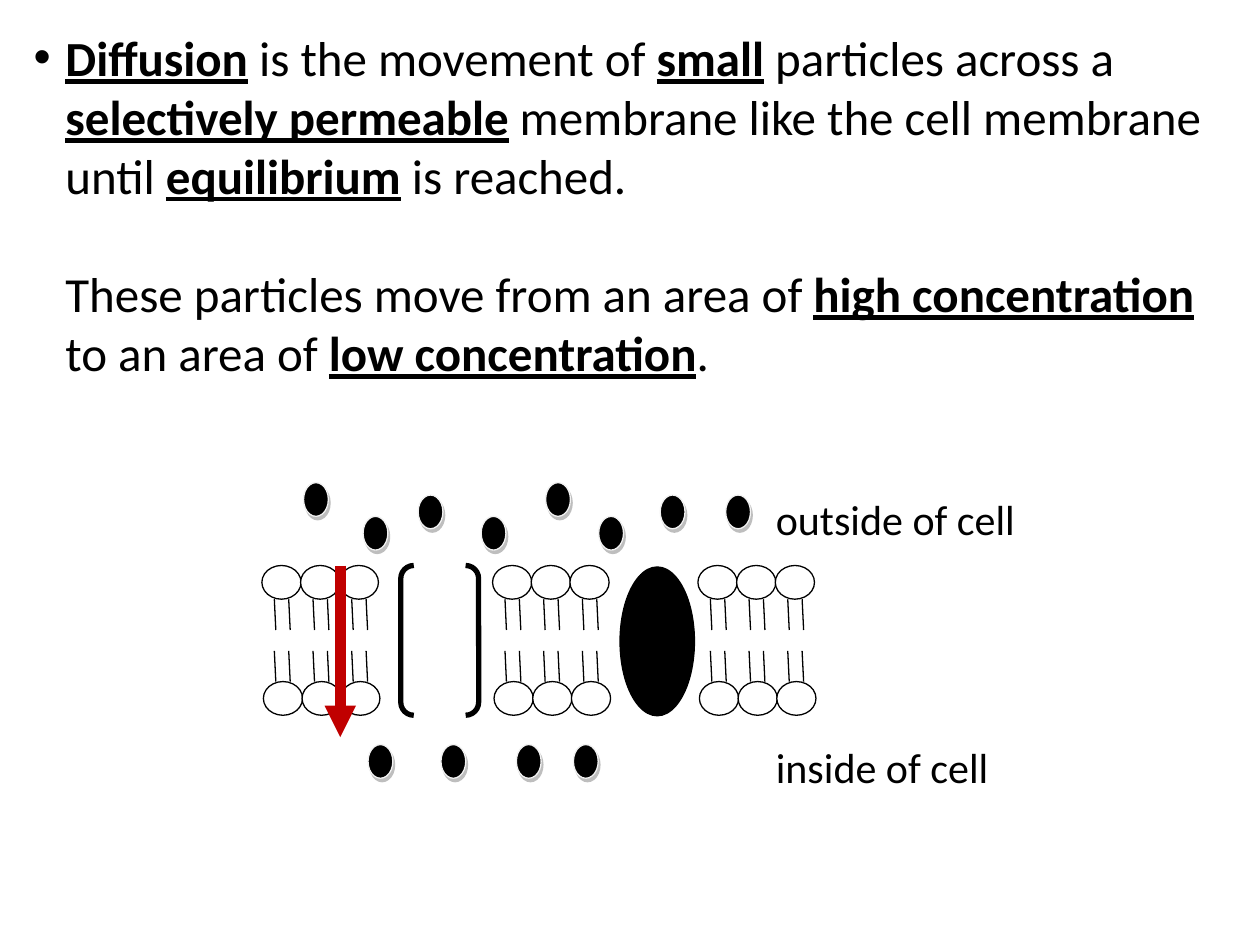
from lxml import etree
from pptx import Presentation
from pptx.dml.color import RGBColor
from pptx.enum.shapes import MSO_CONNECTOR, MSO_SHAPE
from pptx.enum.text import MSO_ANCHOR, PP_ALIGN
from pptx.oxml import parse_xml
from pptx.oxml.ns import nsdecls, qn
from pptx.util import Cm, Pt

COLORS = {"black": "000000", "white": "FFFFFF", "arrow": "C00000",
          "edge": "F2F2F2", "shadow": "7F7F7F"}


def add_run(p, text, size=28, bold=False, underline=False, color="black"):
    r = p.add_run()
    r.text = text
    r.font.name = "Calibri"
    r.font.size = Pt(size)
    r.font.bold = bold
    r.font.underline = underline
    r.font.color.rgb = RGBColor.from_string(COLORS[color])


def add_shape(kind, x, y, w, h, fill="white", line="black", width=0.75):
    sp = s.shapes.add_shape(kind, Cm(x), Cm(y), Cm(w), Cm(h))
    sp.shadow.inherit = False
    if fill:
        sp.fill.solid()
        sp.fill.fore_color.rgb = RGBColor.from_string(COLORS[fill])
    else:
        sp.fill.background()
    sp.line.color.rgb = RGBColor.from_string(COLORS[line])
    sp.line.width = Pt(width)
    return sp


prs = Presentation()
prs.slide_width, prs.slide_height = Cm(25.4), Cm(19.05)
s = prs.slides.add_slide(prs.slide_layouts[6])

# Definition text: key terms are bold and underlined
paragraphs = [
    [("Diffusion", True), (" is the movement of ", False), ("small", True),
     (" particles across a ", False), ("selectively permeable", True),
     (" membrane like the cell membrane until ", False),
     ("equilibrium", True), (" is reached.", False)],
    [("These particles move from an area of ", False),
     ("high concentration", True), (" to an area of ", False),
     ("low concentration", True), (".", False)],
]
tf = s.shapes.add_textbox(Cm(0.43), Cm(0.43), Cm(24.33), Cm(8.2)).text_frame
tf.word_wrap = True
for i, runs in enumerate(paragraphs):
    p = tf.paragraphs[0] if i == 0 else tf.add_paragraph()
    pPr = p._p.get_or_add_pPr()
    pPr.set("marL", str(Cm(0.64)))
    if i == 0:
        pPr.set("indent", str(Cm(-0.64)))
        etree.SubElement(pPr, qn("a:buFont")).set("typeface", "Arial")
        etree.SubElement(pPr, qn("a:buChar")).set("char", "•")
    else:
        p.space_before = Pt(34)
    for text, key in runs:
        add_run(p, text, bold=key, underline=key)

# Membrane: three blocks of three lipids per layer, each with two tails
HEAD_W, HEAD_H, PITCH = 0.79, 0.68, 0.78
TOP, BOTTOM, TAIL = 11.4, 13.74, 0.62
lines = []
for block_x in (5.28, 9.93, 14.07):
    for i in range(3):
        x = block_x + i * PITCH
        for head_x, head_y, tail_y, sign in (
                (x, TOP, TOP + HEAD_H, 1), (x + 0.03, BOTTOM, BOTTOM, -1)):
            add_shape(MSO_SHAPE.OVAL, head_x, head_y, HEAD_W, HEAD_H)
            for dx in (0.25, 0.54):
                tail_x = head_x + dx
                lines.append((tail_x, tail_y, tail_x + sign * 0.03,
                              tail_y + sign * TAIL, "black", 0.75))

# Channel and carrier proteins
channel = add_shape(MSO_SHAPE.DOUBLE_BRACKET, 8.08, TOP, 1.57, 3.02,
                    fill=None, width=3)
channel.adjustments[0] = 0.167
add_shape(MSO_SHAPE.OVAL, 12.5, TOP + 0.03, 1.5, 3, fill="black")

# Lipid tails, then the diffusion arrow as the last line
lines.append((6.86, TOP, 6.86, 14.86, "arrow", 6))
for x1, y1, x2, y2, color, width in lines:
    c = s.shapes.add_connector(MSO_CONNECTOR.STRAIGHT,
                               Cm(x1), Cm(y1), Cm(x2), Cm(y2))
    c.line.color.rgb = RGBColor.from_string(COLORS[color])
    c.line.width = Pt(width)
    etree.SubElement(c._element.spPr, qn("a:effectLst"))
arrow_ln = c.line._get_or_add_ln()
etree.SubElement(arrow_ln, qn("a:tailEnd")).set("type", "triangle")

# Particles: many outside, few inside
HIGH, MID, LOW, INSIDE = 9.73, 9.98, 10.41, 15.01
particles = [(6.12, HIGH), (7.32, LOW), (8.43, MID), (9.7, LOW), (11, HIGH),
             (12.07, LOW), (13.31, MID), (14.63, MID), (7.42, INSIDE),
             (8.89, INSIDE), (10.41, INSIDE), (11.56, INSIDE)]
for x, y in particles:
    sp = add_shape(MSO_SHAPE.OVAL, x, y, 0.5, HEAD_H,
                   fill="black", line="edge", width=0)
    sp._element.spPr.find(qn("a:effectLst")).append(parse_xml(
        f'<a:outerShdw {nsdecls("a")} dist="{Pt(2.2)}" dir="{63 * 60000}" '
        f'algn="ctr" rotWithShape="0"><a:srgbClr val="{COLORS["shadow"]}">'
        '<a:alpha val="50000"/></a:srgbClr></a:outerShdw>'))

# Labels
for text, y, w in (("outside of cell", 9.83, 6.2),
                   ("inside of cell", 14.83, 4.93)):
    sp = add_shape(MSO_SHAPE.RECTANGLE, 15.39, y, w, 1.3, line="white")
    tf = sp.text_frame
    tf.vertical_anchor = MSO_ANCHOR.TOP
    p = tf.paragraphs[0]
    p.alignment = PP_ALIGN.LEFT
    add_run(p, text, size=24)

prs.save("out.pptx")
